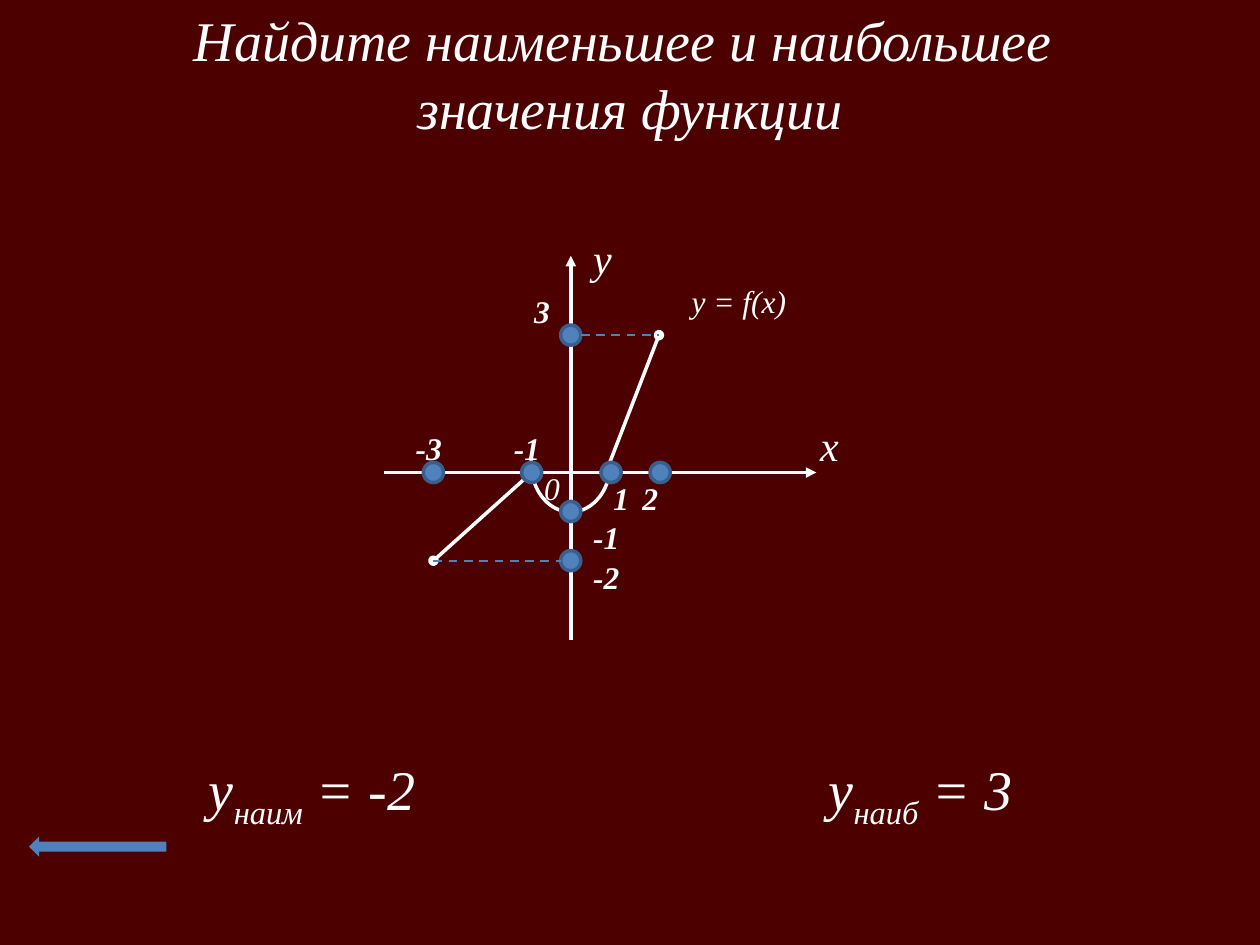
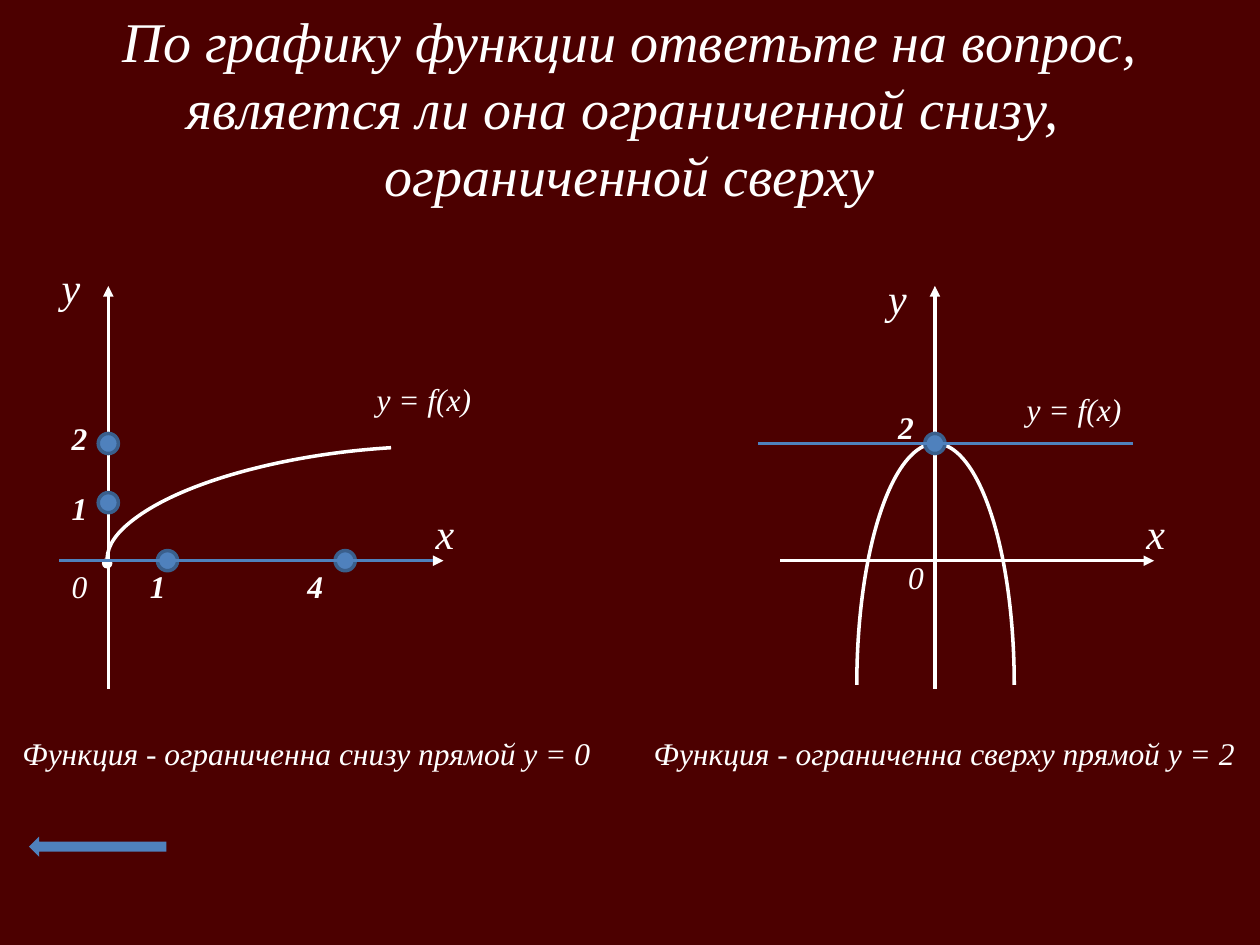
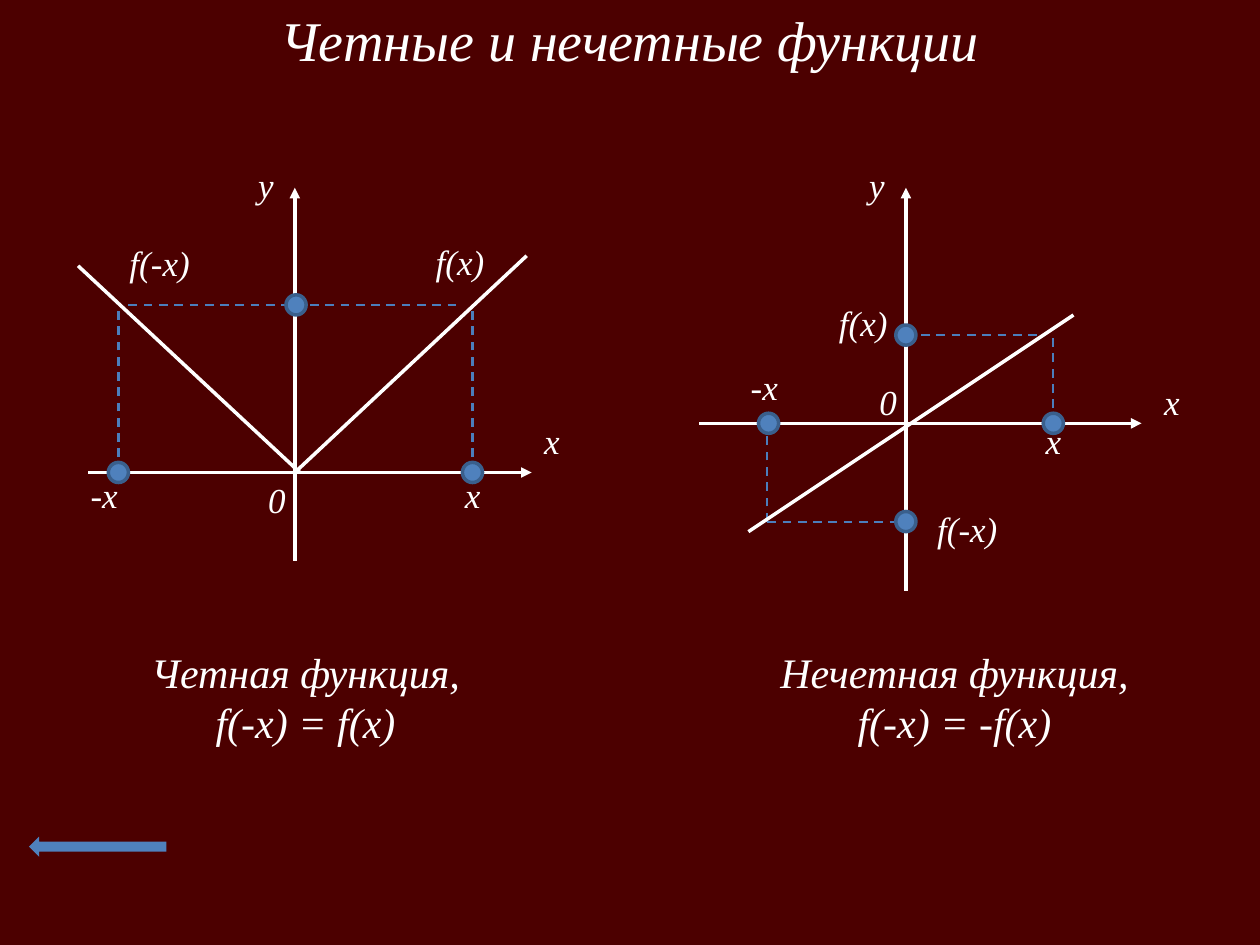
from lxml import etree
from pptx import Presentation
from pptx.dml.color import RGBColor
from pptx.enum.dml import MSO_LINE
from pptx.enum.shapes import MSO_CONNECTOR, MSO_SHAPE
from pptx.enum.text import MSO_ANCHOR, MSO_AUTO_SIZE, PP_ALIGN
from pptx.oxml.ns import qn
from pptx.util import Inches, Pt

WINE = RGBColor(0x4C, 0x00, 0x00)
WHITE = RGBColor(0xFF, 0xFF, 0xFF)
BLUE = RGBColor(0x4F, 0x81, 0xBD)
STEEL = RGBColor(0x4B, 0x7E, 0xBC)
NAVY = RGBColor(0x3A, 0x5F, 0x8C)
FONT = "Times New Roman"
DOT = 0.16
HEIGHTS = {18: 0.4, 20: 0.44, 24: 0.5, 32: 0.64}

DASH = MSO_LINE.DASH
STRAIGHT = MSO_CONNECTOR.STRAIGHT
ARC, OVAL, ARROW = MSO_SHAPE.ARC, MSO_SHAPE.OVAL, MSO_SHAPE.LEFT_ARROW
CENTER, LEFT = PP_ALIGN.CENTER, PP_ALIGN.LEFT
MIDDLE, TOP = MSO_ANCHOR.MIDDLE, MSO_ANCHOR.TOP
FIT = MSO_AUTO_SIZE.SHAPE_TO_FIT_TEXT


class Deck:
    def __init__(self):
        self.prs = Presentation()
        self.prs.slide_width = Inches(10)
        self.prs.slide_height = Inches(7.5)
        self.slide = None

    def start(self, title, height):
        self.slide = self.prs.slides.add_slide(self.prs.slide_layouts[6])
        fill = self.slide.background.fill
        fill.solid()
        fill.fore_color.rgb = WINE
        self.text(title, 0, -0.01, 10, 32, height=height, align=CENTER, anchor=MIDDLE)
        self.shape(ARROW, 0.23, 6.64, 1.09, 0.16, fill=BLUE)

    def text(self, text, x, y, width=0.55, size=18, bold=False, wrap=True,
             height=None, align=LEFT, anchor=TOP):
        box = self.slide.shapes.add_textbox(
            Inches(x), Inches(y), Inches(width), Inches(height or HEIGHTS[size]))
        frame = box.text_frame
        frame.text = text
        frame.word_wrap = wrap
        frame.auto_size = FIT
        frame.vertical_anchor = anchor
        for para in frame.paragraphs:
            para.alignment = align
            for run in para.runs:
                self.style(run, size, bold)
        return frame.paragraphs[0]

    def style(self, run, size, bold=False):
        font = run.font
        font.name, font.size = FONT, Pt(size)
        font.bold, font.italic = bold, True
        font.color.rgb = WHITE

    def bound(self, sub, value, x, width):
        para = self.text("y", x, 5.94, width, 32, wrap=False)
        for part in (sub, f" = {value}"):
            run = para.add_run()
            run.text = part
            self.style(run, 32)
        para.runs[1].font._element.set("baseline", "-25000")

    def marks(self, labels, size=18, bold=True):
        for text, x, y, width in labels:
            self.text(text, x, y, width, size, bold)

    def ends(self, item, head, tail):
        line = item.get_or_add_ln() if hasattr(item, "get_or_add_ln") else item.line
        for tag, kind in (("a:headEnd", head), ("a:tailEnd", tail)):
            if kind:
                etree.SubElement(line, qn(tag), type=kind)

    def line(self, x1, y1, x2, y2, color=WHITE, width=2, dash=None, head=None, tail=None):
        item = self.slide.shapes.add_connector(
            STRAIGHT, Inches(x1), Inches(y1), Inches(x2), Inches(y2))
        item.line.color.rgb = color
        item.line.width = Pt(width)
        if dash:
            item.line.dash_style = dash
        self.ends(item, head, tail)
        etree.SubElement(item._element.spPr, qn("a:effectLst"))

    def guide(self, x1, y1, x2, y2, color=STEEL):
        self.line(x1, y1, x2, y2, color, 1.25, DASH)

    def axes(self, x, y, left, right, top, base):
        self.line(x, top, x, base, head="triangle")
        self.line(right, y, left, y, head="triangle")

    def shape(self, kind, x, y, width, height, fill=None, edge=None):
        item = self.slide.shapes.add_shape(
            kind, Inches(x), Inches(y), Inches(width), Inches(height))
        item.shadow.inherit = False
        if fill:
            item.fill.solid()
            item.fill.fore_color.rgb = fill
        else:
            item.fill.background()
        if edge:
            item.line.color.rgb = edge
            item.line.width = Pt(2)
        else:
            item.line.fill.background()
        return item

    def arc(self, x, y, width, height, span=None, turn=0, flip=False, head=None):
        item = self.shape(ARC, x, y, width, height, edge=WHITE)
        item.rotation = turn
        if span:
            item.adjustments[0], item.adjustments[1] = span
        if flip:
            item._element.spPr.xfrm.set("flipH", "1")
        self.ends(item, head, None)

    def dots(self, *spots):
        for x, y in spots:
            self.shape(OVAL, x - DOT / 2, y - DOT / 2, DOT, DOT, BLUE, NAVY)


def extremes(deck):
    deck.start("Найдите наименьшее и наибольшее \nзначения функции", 1.18)
    deck.axes(4.53, 3.75, 3.05, 6.48, 2.03, 5.08)
    deck.text("x", 6.41, 3.28, size=24)
    deck.text("y", 4.61, 1.8, size=24)
    deck.text("0", 4.22, 3.67)
    deck.text("y = f(x)", 5.39, 2.19, 0.96, wrap=False)
    deck.marks([("1", 4.77, 3.75, 0.31), ("2", 5, 3.75, 0.31),
                ("-1", 4.61, 4.06, 0.55), ("-1", 3.98, 3.36, 0.55),
                ("-3", 3.2, 3.36, 0.47), ("3", 4.14, 2.27, 0.31),
                ("-2", 4.61, 4.38, 0.54)])
    deck.line(3.44, 4.45, 4.22, 3.75, head="oval")
    deck.arc(4.14, 3.36, 0.78, 0.63, (161.97, 56.7), 90)
    deck.line(4.84, 3.67, 5.23, 2.66, tail="oval")
    deck.bound("наим", "-2", 1.56, 2.05)
    deck.bound("наиб", "3", 6.48, 1.86)
    deck.dots(*[(x, 3.75) for x in (4.85, 5.24, 4.22, 3.44)],
              *[(4.53, y) for y in (4.06, 4.45, 2.66)])
    deck.guide(3.44, 4.45, 4.45, 4.45, BLUE)
    deck.guide(4.61, 2.66, 5.23, 2.66, BLUE)


def limits(deck):
    deck.start("По графику функции ответьте на вопрос, является ли она "
               "ограниченной снизу, \nограниченной сверху", 1.72)
    for flip in (True, False):
        deck.arc(6.8, 3.52, 1.25, 3.83, flip=flip)
    deck.axes(0.86, 4.45, 0.55, 3.52, 2.27, 5.47)
    deck.dots((1.33, 4.45), (2.74, 4.45), (0.86, 3.99), (0.86, 3.52))
    deck.arc(2.23, 2.18, 1.38, 4.16, (162, 12.22), 264.2, head="oval")
    deck.line(0.47, 4.45, 3.44, 4.45, BLUE)
    deck.axes(7.42, 4.45, 6.19, 9.16, 2.27, 5.47)
    deck.dots((7.42, 3.52))
    deck.line(6.02, 3.52, 8.99, 3.52, BLUE)
    for text, x, y in (("x", 3.36, 3.98), ("y", 0.39, 2.03),
                       ("x", 9, 3.98), ("y", 6.95, 2.11)):
        deck.text(text, x, y, size=24)
    deck.marks([("0", 0.47, 4.45, 0.31), ("0", 7.11, 4.38, 0.31)], bold=False)
    deck.marks([("1", 1.09, 4.45, 0.31), ("4", 2.34, 4.45, 0.31),
                ("2", 0.47, 3.28, 0.31), ("1", 0.47, 3.83, 0.31),
                ("2", 7.03, 3.19, 0.31)])
    for text, x, y, width in (
            ("y = f(x)", 2.89, 2.97, 0.96),
            ("y = f(x)", 8.05, 3.05, 0.96),
            ("Функция - ограниченна снизу прямой у = 0", 0.08, 5.78, 4.75),
            ("Функция - ограниченна сверху прямой у = 2", 5.09, 5.78, 4.86)):
        deck.text(text, x, y, width, wrap=False)


def parity(deck):
    deck.start("Четные и нечетные функции", 0.64)
    for ends in ((0.94, 3.75, 0.94, 2.42), (1.02, 2.42, 2.34, 2.42),
                 (3.75, 3.75, 3.75, 2.42), (2.34, 2.42, 3.67, 2.42),
                 (7.19, 2.66, 8.28, 2.66), (6.09, 4.14, 6.09, 3.36),
                 (6.09, 4.14, 7.19, 4.14), (8.36, 3.36, 8.36, 2.66)):
        deck.guide(*ends)
    deck.line(4.18, 2.03, 2.34, 3.75)
    deck.line(2.38, 3.75, 0.62, 2.11)
    deck.axes(2.34, 3.75, 0.7, 4.22, 1.49, 4.45)
    deck.axes(7.19, 3.36, 5.55, 9.06, 1.49, 4.69)
    deck.line(8.52, 2.5, 5.94, 4.22)
    deck.dots((0.94, 3.75), (3.75, 3.75), (2.35, 2.42),
              (6.1, 3.36), (8.36, 3.36), (7.19, 4.14), (7.19, 2.66))
    deck.marks([("x", 4.22, 3.28, 0.55), ("0", 2.03, 3.75, 0.55),
                ("y", 1.95, 1.25, 0.55), ("-x", 0.62, 3.71, 0.55),
                ("x", 3.59, 3.71, 0.55), ("x", 9.14, 2.97, 0.55),
                ("0", 6.88, 2.97, 0.39), ("y", 6.8, 1.25, 0.55),
                ("-x", 5.86, 2.85, 0.55), ("x", 8.2, 3.28, 0.55)], 20, False)
    for text, x, y, width in (("f(x)", 3.36, 1.86, 0.59), (" f(-x)", 0.86, 1.87, 0.75),
                              ("f(x)", 6.56, 2.34, 0.59), (" f(-x)", 7.27, 3.98, 0.75)):
        deck.text(text, x, y, width, 20, wrap=False)
    for text, x, width in (("Четная функция,\nf(-x) = f(x)", 1.09, 2.67),
                           ("Нечетная функция,\nf(-x) = -f(x)", 6.08, 2.99)):
        deck.text(text, x, 5.08, width, 24, wrap=False, height=0.91, align=CENTER)


def main():
    deck = Deck()
    for build in (extremes, limits, parity):
        build(deck)
    deck.prs.save("out.pptx")


if __name__ == "__main__":
    main()
